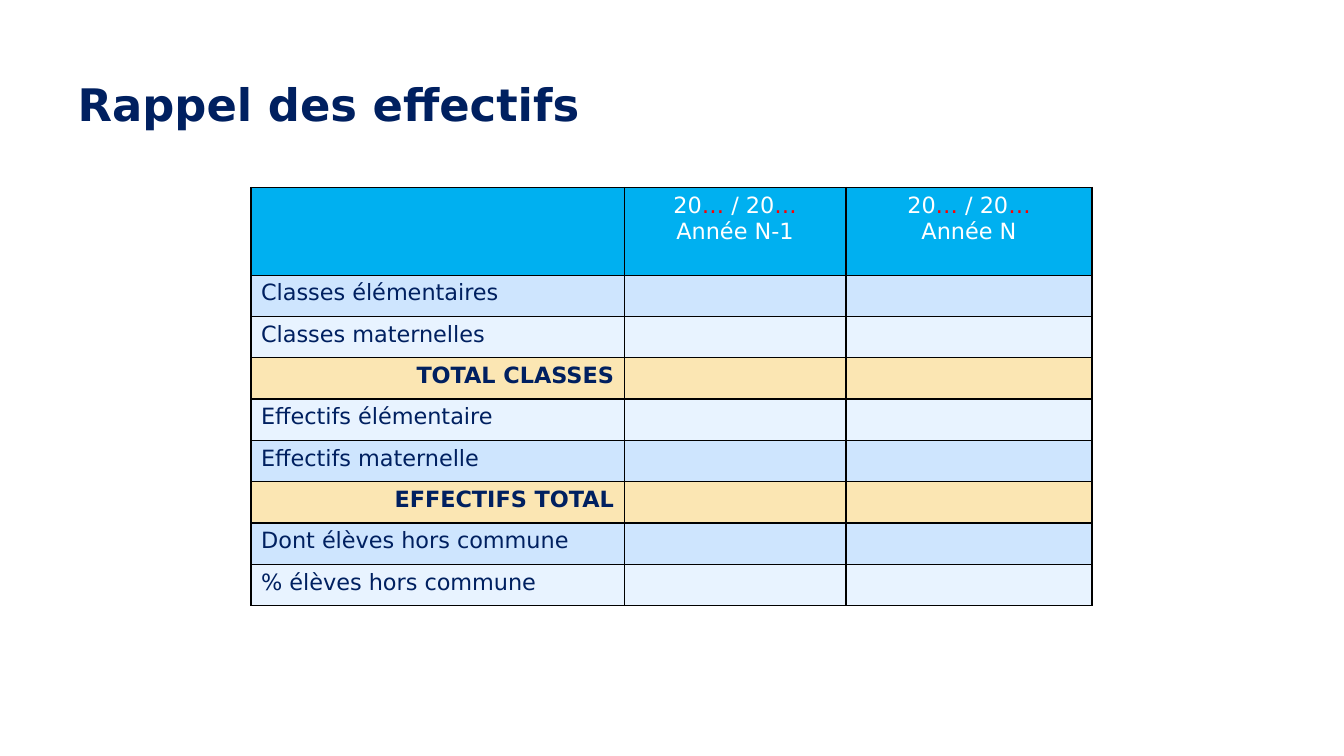
from dataclasses import dataclass

from lxml import etree
from pptx import Presentation, util as u
from pptx.dml.color import RGBColor
from pptx.enum import text
from pptx.oxml.ns import qn


@dataclass(frozen=True)
class Theme:
    font: str = "DejaVu Sans"
    title_size: int = 32
    table_size: int = 16
    navy: str = "002060"
    white: str = "FFFFFF"
    red: str = "FF0000"
    border: str = "000000"
    header: str = "00B0F0"
    medium: str = "CEE5FE"
    pale: str = "E8F3FF"
    total: str = "FBE6B3"


class SlideBuilder:
    def __init__(self, deck, theme):
        self.theme = theme
        self.slide = deck.slides.add_slide(deck.slide_layouts[5])

    def add_span(self, para, wording, color, size, bold=False):
        span = para.add_run()
        span.text = wording
        span.font.name = self.theme.font
        span.font.size = u.Pt(size)
        span.font.bold = bold
        span.font.color.rgb = RGBColor.from_string(color)

    def title(self, wording, left, top, width, height):
        box = self.slide.shapes.title
        box.left, box.top = u.Inches(left), u.Inches(top)
        box.width, box.height = u.Inches(width), u.Inches(height)
        frame = box.text_frame
        frame.word_wrap = True
        frame.auto_size = text.MSO_AUTO_SIZE.NONE
        frame.vertical_anchor = text.MSO_ANCHOR.TOP
        frame.margin_top = u.Inches(0.08)
        para = frame.paragraphs[0]
        para.alignment = text.PP_ALIGN.LEFT
        self.add_span(para, wording, self.theme.navy, self.theme.title_size, True)

    def table(self, left, top, widths, heights):
        frame = self.slide.shapes.add_table(
            len(heights), len(widths), u.Inches(left), u.Inches(top),
            u.Inches(sum(widths)), u.Inches(sum(heights)))
        table = frame.table
        for column, width in zip(table.columns, widths):
            column.width = u.Inches(width)
        for row, height in zip(table.rows, heights):
            row.height = u.Inches(height)
        return table

    def style_cell(self, cell, fill):
        properties = cell._tc.get_or_add_tcPr()
        for side in ("lnL", "lnR", "lnT", "lnB"):
            line = etree.SubElement(properties, qn(f"a:{side}"), w=str(u.Pt(1)))
            paint = etree.SubElement(line, qn("a:solidFill"))
            etree.SubElement(paint, qn("a:srgbClr"), val=self.theme.border)
        cell.fill.solid()
        cell.fill.fore_color.rgb = RGBColor.from_string(fill)

    def header_cell(self, cell, year):
        theme = self.theme
        years = [("20", theme.white), ("… ", theme.red),
                 ("/ 20", theme.white), ("…", theme.red)]
        frame = cell.text_frame
        for para, spans in ((frame.paragraphs[0], years),
                            (frame.add_paragraph(), [(year, theme.white)])):
            para.alignment = text.PP_ALIGN.CENTER
            for wording, color in spans:
                self.add_span(para, wording, color, theme.table_size)

    def label_cell(self, cell, label, is_total):
        para = cell.text_frame.paragraphs[0]
        para.alignment = text.PP_ALIGN.RIGHT if is_total else text.PP_ALIGN.LEFT
        self.add_span(para, label, self.theme.navy, self.theme.table_size, is_total)


def main():
    theme = Theme()
    deck = Presentation()
    deck.slide_width, deck.slide_height = u.Inches(13.33), u.Inches(7.5)
    page = SlideBuilder(deck, theme)
    page.title("Rappel des effectifs", 0.67, 0.68, 10.57, 0.87)

    rows = [
        ("Classes élémentaires", theme.medium),
        ("Classes maternelles", theme.pale),
        ("TOTAL CLASSES", theme.total),
        ("Effectifs élémentaire", theme.pale),
        ("Effectifs maternelle", theme.medium),
        ("EFFECTIFS TOTAL", theme.total),
        ("Dont élèves hors commune", theme.medium),
        ("% élèves hors commune", theme.pale),
    ]
    table = page.table(2.49, 1.86, [3.7, 2.2, 2.44], [0.87] + [0.41] * len(rows))
    fills = [theme.header] + [fill for _, fill in rows]
    for row, fill in zip(table.rows, fills):
        for cell in row.cells:
            page.style_cell(cell, fill)
    for column, year in enumerate(("Année N-1", "Année N"), start=1):
        page.header_cell(table.cell(0, column), year)
    for index, (label, fill) in enumerate(rows, start=1):
        page.label_cell(table.cell(index, 0), label, fill == theme.total)

    deck.save("out.pptx")


if __name__ == "__main__":
    main()
